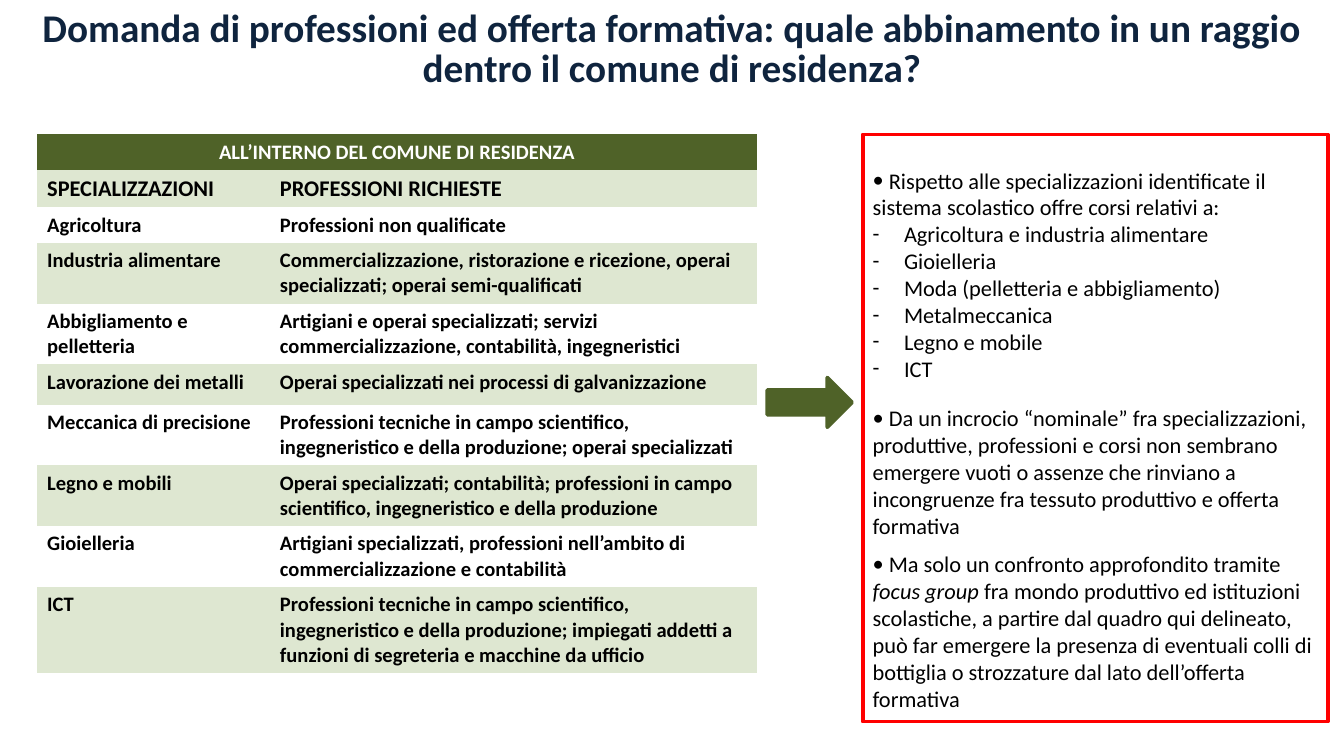
"""Build the slide matching requested professions with local training courses."""
from dataclasses import dataclass

from lxml.etree import SubElement
from pptx import Presentation
from pptx.dml.color import RGBColor
from pptx.enum.shapes import MSO_SHAPE
from pptx.enum.text import MSO_ANCHOR, MSO_AUTO_SIZE, PP_ALIGN
from pptx.oxml.ns import qn
from pptx.shapes.base import BaseShape
from pptx.slide import Slide
from pptx.table import _Cell
from pptx.text.text import TextFrame, _Paragraph
from pptx.util import Pt

OLIVE = RGBColor(0x4F, 0x62, 0x28)
PALE_GREEN = RGBColor(0xDE, 0xE7, 0xD1)
WHITE = RGBColor(0xFF, 0xFF, 0xFF)
BLACK = RGBColor(0, 0, 0)
RED = RGBColor(0xFF, 0, 0)
NAVY = RGBColor(0x0F, 0x24, 0x3E)
FONT = "Calibri"
SIDE_INSET, EDGE_INSET = 5.3, 2.7
PLAIN_TABLE_STYLE = "{2D5ABB26-0587-4C30-8999-92F81FD0307C}"


@dataclass(frozen=True)
class Specialization:
    name: str
    professions: str
    height: float
    size: float = 11


@dataclass(frozen=True)
class Finding:
    text: str
    bullet: str = "•"
    indent: float = 0
    space_before: float = 0
    emphasis: str = ""


def course(name: str) -> Finding:
    return Finding(name, "-", 16.8)


SPECIALIZATIONS = [
    Specialization("SPECIALIZZAZIONI", "PROFESSIONI RICHIESTE", 19, 12),
    Specialization("Agricoltura", "Professioni non qualificate", 19),
    Specialization("Industria alimentare",
                   "Commercializzazione, ristorazione e ricezione, operai "
                   "specializzati; operai semi-qualificati", 30),
    Specialization("Abbigliamento e pelletteria",
                   "Artigiani e operai specializzati; servizi "
                   "commercializzazione, contabilità, ingegneristici", 24),
    Specialization("Lavorazione dei metalli",
                   "Operai specializzati nei processi di galvanizzazione", 21.6),
    Specialization("Meccanica di precisione",
                   "Professioni tecniche in campo scientifico, ingegneristico "
                   "e della produzione; operai specializzati", 30),
    Specialization("Legno e mobili",
                   "Operai specializzati; contabilità; professioni in campo "
                   "scientifico, ingegneristico e della produzione", 30),
    Specialization("Gioielleria",
                   "Artigiani specializzati, professioni nell’ambito di "
                   "commercializzazione e contabilità", 30),
    Specialization("ICT",
                   "Professioni tecniche in campo scientifico, ingegneristico "
                   "e della produzione; impiegati addetti a funzioni di "
                   "segreteria e macchine da ufficio", 39),
]

FINDINGS = [
    Finding(" Rispetto alle specializzazioni identificate il sistema "
            "scolastico offre corsi relativi a:"),
    course("Agricoltura e industria alimentare"),
    course("Gioielleria"),
    course("Moda (pelletteria e abbigliamento)"),
    course("Metalmeccanica"),
    course("Legno e mobile"),
    course("ICT"),
    Finding(" Da un incrocio “nominale” fra specializzazioni, produttive, "
            "professioni e corsi non sembrano emergere vuoti o assenze che "
            "rinviano a incongruenze fra tessuto produttivo e offerta "
            "formativa", space_before=12.2),
    Finding(" Ma solo un confronto approfondito tramite focus group fra mondo "
            "produttivo ed istituzioni scolastiche, a partire dal quadro qui "
            "delineato, può far emergere la presenza di eventuali colli di "
            "bottiglia o strozzature dal lato dell’offerta formativa",
            space_before=6.1, emphasis="focus group"),
]


def place(shape: BaseShape, left: float, top: float, width: float, height: float) -> None:
    shape.left, shape.top = Pt(left), Pt(top)
    shape.width, shape.height = Pt(width), Pt(height)


def set_insets(holder: TextFrame | _Cell, top: float = EDGE_INSET) -> None:
    holder.margin_left = holder.margin_right = Pt(SIDE_INSET)
    holder.margin_top, holder.margin_bottom = Pt(top), Pt(EDGE_INSET)


def style_font(paragraph: _Paragraph, size: float, color: RGBColor, bold: bool) -> None:
    font = paragraph.font
    font.name, font.size, font.bold = FONT, Pt(size), bold
    font.color.rgb = color


def fill_cell(cell: _Cell, text: str, size: float, color: RGBColor, fill: RGBColor) -> None:
    cell.text = text
    set_insets(cell)
    cell.fill.solid()
    cell.fill.fore_color.rgb = fill
    style_font(cell.text_frame.paragraphs[0], size, color, True)


def write_title(slide: Slide) -> None:
    title = slide.shapes.title
    place(title, 0, 4.3, 720, 45.4)
    frame = title.text_frame
    frame.text = ("Domanda di professioni ed offerta formativa: quale abbinamento "
                  "in un raggio dentro il comune di residenza?")
    frame.word_wrap, frame.auto_size = True, MSO_AUTO_SIZE.NONE
    frame.vertical_anchor = MSO_ANCHOR.MIDDLE
    set_insets(frame)
    heading = frame.paragraphs[0]
    heading.alignment, heading.line_spacing = PP_ALIGN.CENTER, 0.85
    style_font(heading, 21, NAVY, True)


def draw_specializations(slide: Slide) -> None:
    table = slide.shapes.add_table(
        len(SPECIALIZATIONS) + 1, 2, Pt(20), Pt(72), Pt(385.5), Pt(283.7)).table
    table._tbl.tblPr.find(qn("a:tableStyleId")).text = PLAIN_TABLE_STYLE
    table.columns[0].width, table.columns[1].width = Pt(124.7), Pt(260.8)
    table.rows[0].height = Pt(18.7)
    heading = table.cell(0, 0)
    heading.merge(table.cell(0, 1))
    fill_cell(heading, "ALL’INTERNO DEL COMUNE DI RESIDENZA", 11, WHITE, OLIVE)
    heading.text_frame.paragraphs[0].alignment = PP_ALIGN.CENTER
    for index, entry in enumerate(SPECIALIZATIONS, start=1):
        table.rows[index].height = Pt(entry.height)
        band = PALE_GREEN if index % 2 else WHITE
        for column, text in enumerate((entry.name, entry.professions)):
            fill_cell(table.cell(index, column), text, entry.size, BLACK, band)


def write_finding(paragraph: _Paragraph, finding: Finding) -> None:
    properties = paragraph._p.get_or_add_pPr()
    properties.set("marL", str(Pt(finding.indent)))
    properties.set("indent", str(-Pt(finding.indent)))
    SubElement(properties, qn("a:buFont")).set("typeface", FONT)
    SubElement(properties, qn("a:buChar")).set("char", finding.bullet)
    paragraph.alignment = PP_ALIGN.LEFT
    paragraph.space_before, paragraph.space_after = Pt(finding.space_before), Pt(0)
    style_font(paragraph, 12, BLACK, False)
    if not finding.emphasis:
        paragraph.add_run().text = finding.text
        return
    before, emphasis, after = finding.text.partition(finding.emphasis)
    for text in (before, emphasis, after):
        run = paragraph.add_run()
        run.text = text
        run.font.italic = text == emphasis


def write_findings(slide: Slide) -> None:
    findings_box = slide.placeholders[1]
    place(findings_box, 462.2, 72, 249.1, 314.6)
    findings_box.line.color.rgb = RED
    findings_box.line.width = Pt(2)
    frame = findings_box.text_frame
    frame.word_wrap, frame.auto_size = True, MSO_AUTO_SIZE.NONE
    frame.vertical_anchor = MSO_ANCHOR.TOP
    set_insets(frame, top=17.3)
    for index, finding in enumerate(FINDINGS):
        write_finding(frame.add_paragraph() if index else frame.paragraphs[0], finding)


def draw_arrow(slide: Slide) -> None:
    arrow = slide.shapes.add_shape(
        MSO_SHAPE.RIGHT_ARROW, Pt(411.1), Pt(202.3), Pt(45.4), Pt(26.6))
    arrow.shadow.inherit = False
    arrow.fill.solid()
    arrow.fill.fore_color.rgb = arrow.line.color.rgb = OLIVE
    arrow.line.width = Pt(2)


def main() -> None:
    deck = Presentation()
    deck.slide_width, deck.slide_height = Pt(720), Pt(405)
    slide = deck.slides.add_slide(deck.slide_layouts[1])
    write_title(slide)
    draw_specializations(slide)
    draw_arrow(slide)
    write_findings(slide)
    deck.save("out.pptx")


if __name__ == "__main__":
    main()
